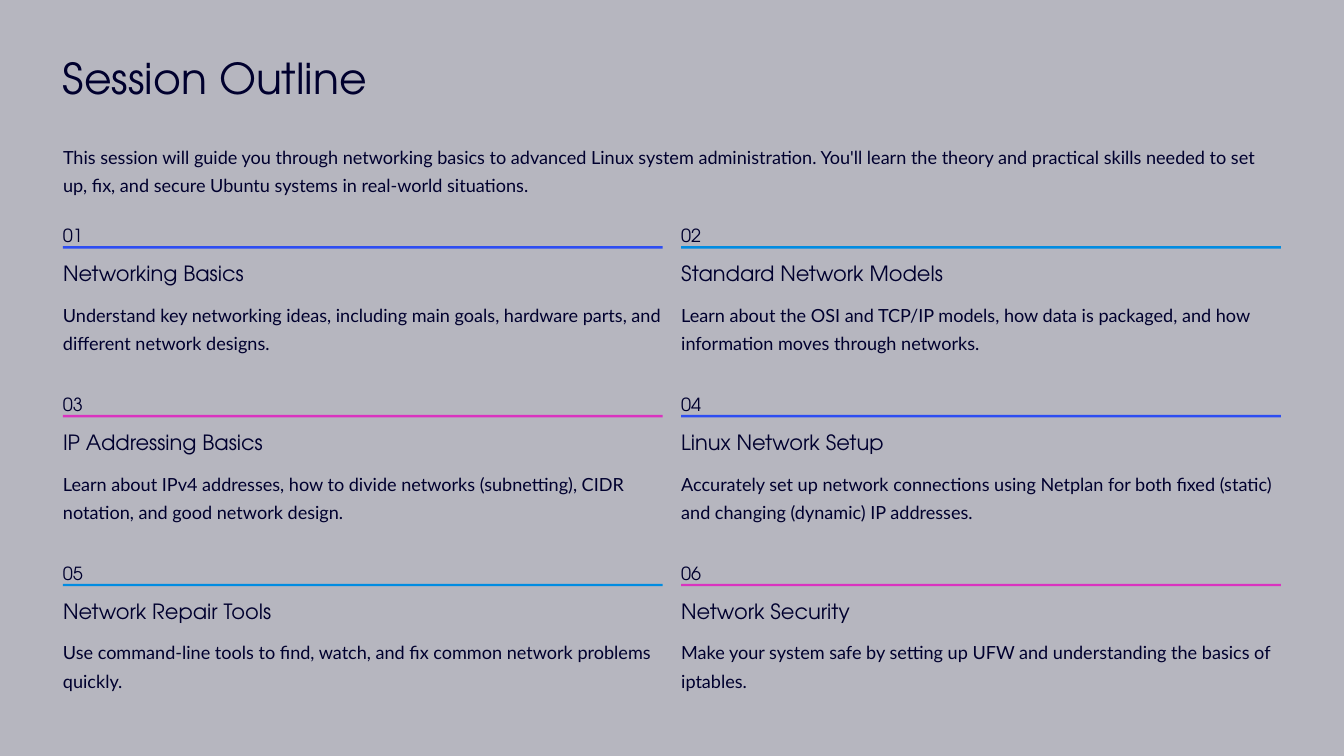
"""Build the Session Outline slide with six numbered topics."""
from lxml import etree
from pptx import Presentation, util as u
from pptx.dml.color import RGBColor
from pptx.enum import shapes
from pptx.oxml import ns

TITLE = "Session Outline"
INTRO = (
    "This session will guide you through networking basics to advanced Linux system administration. "
    "You'll learn the theory and practical skills needed to set up, fix, and secure Ubuntu systems "
    "in real-world situations."
)
TOPICS = [
    ("Networking Basics",
     "Understand key networking ideas, including main goals, hardware parts, and different network designs."),
    ("Standard Network Models",
     "Learn about the OSI and TCP/IP models, how data is packaged, and how information moves through networks."),
    ("IP Addressing Basics",
     "Learn about IPv4 addresses, how to divide networks (subnetting), CIDR notation, and good network design."),
    ("Linux Network Setup",
     "Accurately set up network connections using Netplan for both fixed (static) and changing (dynamic) "
     "IP addresses."),
    ("Network Repair Tools",
     "Use command-line tools to find, watch, and fix common network problems quickly."),
    ("Network Security",
     "Make your system safe by setting up UFW and understanding the basics of iptables."),
]
RULE_COLOURS = ["2D4DF2", "018CE1", "DA33BF"]
BACKGROUND, VEIL, INK = "000000", "F3F3FF", "00002E"
VEIL_OPACITY = 75
DISPLAY, BODY = "TeX Gyre Adventor", "Lato"

WIDTH, HEIGHT = 16, 9
COLUMNS = 2
LEFT, TOP = 0.75, 2.59
COLUMN_WIDTH, COLUMN_PITCH = 7.14, 7.36
ROW_PITCH = 2.01


def paint(fill, colour):
    fill.solid()
    fill.fore_color.rgb = RGBColor.from_string(colour)


def add_bar(slide, area, colour):
    bar = slide.shapes.add_shape(shapes.MSO_SHAPE.RECTANGLE, *map(u.Inches, area))
    bar.shadow.inherit = False
    bar.line.fill.background()
    paint(bar.fill, colour)
    return bar


def add_veil(slide):
    veil = add_bar(slide, (0, 0, WIDTH, HEIGHT), VEIL)
    colour = veil.element.spPr.find(f"{ns.qn('a:solidFill')}/{ns.qn('a:srgbClr')}")
    etree.SubElement(colour, ns.qn("a:alpha"), val=str(VEIL_OPACITY * 1000))


def add_text(slide, content, area, font, size, leading, wrap=False):
    box = slide.shapes.add_textbox(*map(u.Inches, area))
    frame = box.text_frame
    frame.margin_left = frame.margin_right = frame.margin_top = frame.margin_bottom = 0
    frame.word_wrap = wrap
    para = frame.paragraphs[0]
    para.text = content
    para.line_spacing = u.Pt(leading)
    para.font.name = font
    para.font.size = u.Pt(size)
    para.font.color.rgb = RGBColor.from_string(INK)


def add_topic(slide, index, heading, detail):
    row, column = divmod(index, COLUMNS)
    left = LEFT + column * COLUMN_PITCH
    top = TOP + row * ROW_PITCH
    add_text(slide, f"{index + 1:02}", (left, top, 0.3, 0.27), DISPLAY, 15.5, 24.5)
    add_bar(slide, (left, top + 0.34, COLUMN_WIDTH, 0.03), RULE_COLOURS[index % len(RULE_COLOURS)])
    add_text(slide, heading, (left, top + 0.5, 3.15, 0.32), DISPLAY, 18, 22.5)
    add_text(slide, detail, (left, top + 0.95, COLUMN_WIDTH, 0.69), BODY, 15.5, 24.5, wrap=True)


def main():
    deck = Presentation()
    deck.slide_width, deck.slide_height = u.Inches(WIDTH), u.Inches(HEIGHT)
    slide = deck.slides.add_slide(deck.slide_layouts[6])
    paint(slide.background.fill, BACKGROUND)
    add_veil(slide)
    add_text(slide, TITLE, (LEFT, 0.59, 5.07, 0.63), DISPLAY, 36.5, 45.5)
    add_text(slide, INTRO, (LEFT, 1.66, 14.49, 0.69), BODY, 15.5, 24.5, wrap=True)
    for index, (heading, detail) in enumerate(TOPICS):
        add_topic(slide, index, heading, detail)
    deck.save("out.pptx")


if __name__ == "__main__":
    main()
